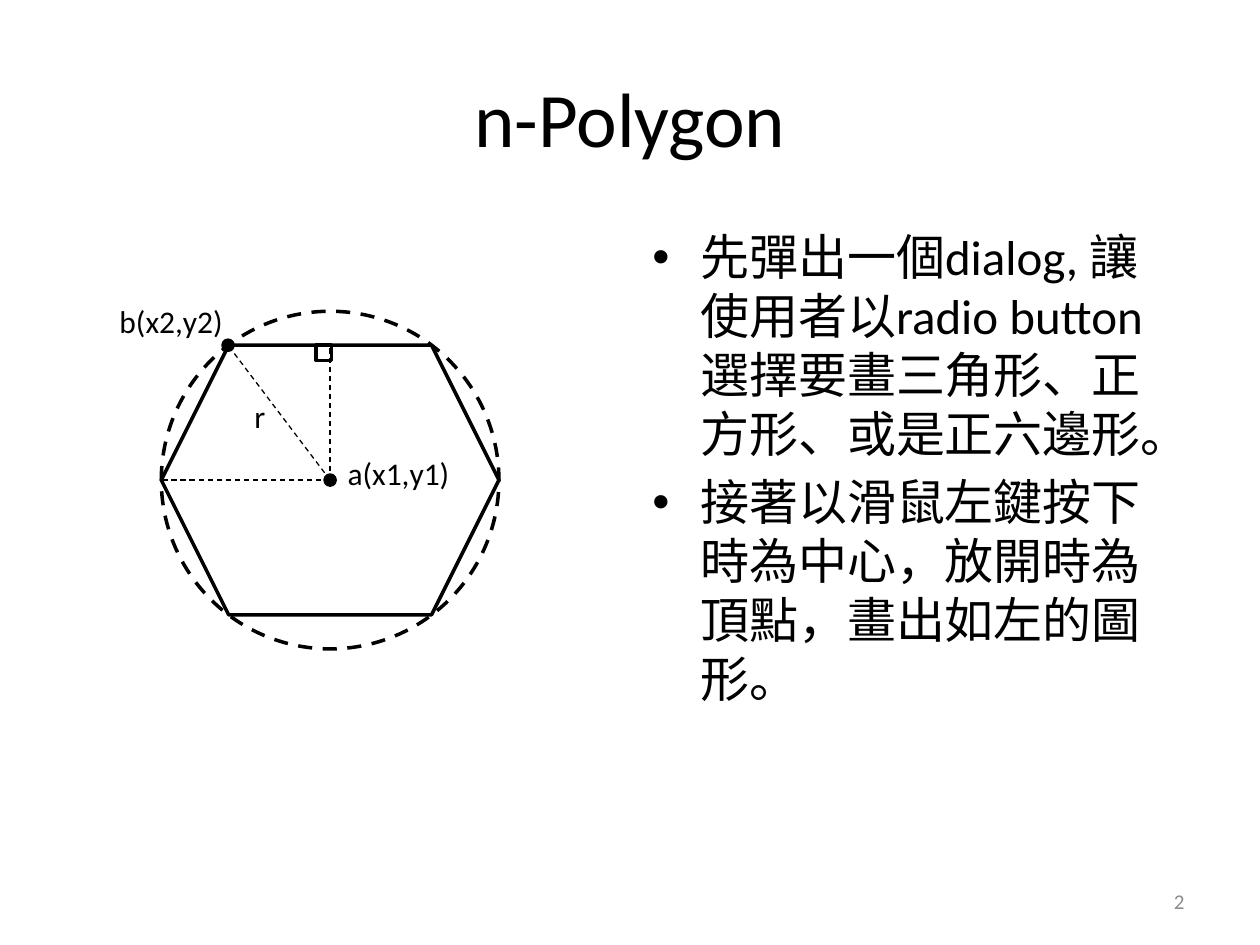
from dataclasses import dataclass

from lxml.etree import SubElement
from pptx import Presentation
from pptx.dml.color import RGBColor
from pptx.enum.dml import MSO_LINE
from pptx.enum.shapes import MSO_CONNECTOR, MSO_SHAPE
from pptx.enum.text import MSO_ANCHOR, PP_ALIGN
from pptx.oxml.ns import qn
from pptx.util import Inches, Pt


@dataclass(frozen=True)
class Theme:
    font: str = "Calibri"
    ink: RGBColor = RGBColor(0, 0, 0)
    muted: RGBColor = RGBColor(0x8C, 0x8C, 0x8C)
    title: int = 44
    body: int = 28
    label: int = 18
    number: int = 12
    outline: float = 2
    guide: float = 0.75


THEME = Theme()
TITLE = "n-Polygon"
BULLETS = [
    "先彈出一個dialog, 讓使用者以radio button選擇要畫三角形、正方形、或是正六邊形。",
    "接著以滑鼠左鍵按下時為中心，放開時為頂點，畫出如左的圖形。",
]
PAGE_NUMBER = "2"

CENTER_X, CENTER_Y = 2.62, 3.81
RADIUS = 1.34
HALF_HEIGHT = 1.07
VERTEX = (1.81, CENTER_Y - HALF_HEIGHT)
DOT = 0.08
SQUARE = 0.12
GUIDE_ENDS = [
    (CENTER_X, CENTER_Y - HALF_HEIGHT),
    VERTEX,
    (CENTER_X - RADIUS, CENTER_Y),
]
LABELS = [
    ("r", (1.92, 3.1, 0.29, 0.4)),
    ("a(x1,y1)", (2.66, 3.55, 1.02, 0.71)),
    ("b(x2,y2)", (0.85, 2.35, 1.03, 0.71)),
]


def style_text(paragraph, size, color=THEME.ink):
    font = paragraph.font
    font.name, font.size, font.color.rgb = THEME.font, Pt(size), color


def add_text(shapes, text, box, size, color=THEME.ink, wrap=True):
    text_box = shapes.add_textbox(*map(Inches, box))
    frame = text_box.text_frame
    frame.word_wrap = wrap
    frame.text = text
    for paragraph in frame.paragraphs:
        style_text(paragraph, size, color)
    return frame


def add_outline(shapes, kind, box, dash=None, filled=False):
    shape = shapes.add_shape(kind, *map(Inches, box))
    shape.shadow.inherit = False
    if filled:
        shape.fill.solid()
        shape.fill.fore_color.rgb = THEME.ink
    else:
        shape.fill.background()
    shape.line.color.rgb = THEME.ink
    shape.line.width = Pt(THEME.outline)
    if dash:
        shape.line.dash_style = dash


def centered_box(x, y, half_width, half_height):
    return x - half_width, y - half_height, 2 * half_width, 2 * half_height


def add_guide(shapes, end):
    points = (CENTER_X, CENTER_Y, *end)
    connector = shapes.add_connector(MSO_CONNECTOR.STRAIGHT, *map(Inches, points))
    connector.line.color.rgb = THEME.ink
    connector.line.width = Pt(THEME.guide)
    connector.line.dash_style = MSO_LINE.DASH
    SubElement(connector._element.spPr, qn("a:effectLst"))


def add_diagram(slide):
    shapes = slide.shapes.add_group_shape().shapes
    add_outline(shapes, MSO_SHAPE.HEXAGON,
                centered_box(CENTER_X, CENTER_Y, RADIUS, HALF_HEIGHT))
    add_outline(shapes, MSO_SHAPE.OVAL,
                centered_box(CENTER_X, CENTER_Y, RADIUS, RADIUS), MSO_LINE.DASH)
    for end in GUIDE_ENDS:
        add_guide(shapes, end)
    for x, y in [(CENTER_X, CENTER_Y), VERTEX]:
        add_outline(shapes, MSO_SHAPE.OVAL,
                    centered_box(x, y, DOT / 2, DOT / 2), filled=True)
    for text, box in LABELS:
        add_text(shapes, text, box, THEME.label, wrap=False)
    add_outline(shapes, MSO_SHAPE.RECTANGLE,
                (CENTER_X - SQUARE + 0.01, VERTEX[1], SQUARE, SQUARE))


def add_bullets(slide):
    frame = add_text(slide.shapes, "\n".join(BULLETS), (5.08, 1.75, 4.42, 4.95), THEME.body)
    for index, paragraph in enumerate(frame.paragraphs):
        paragraph.space_before = Pt(0.2 * THEME.body if index else 0)
        properties = paragraph._p.get_or_add_pPr()
        properties.set("marL", str(Inches(0.38)))
        properties.set("indent", str(-Inches(0.38)))
        font_properties = properties.find(qn("a:defRPr"))
        bullet_font = properties.makeelement(qn("a:buFont"), {"typeface": "Arial"})
        bullet = properties.makeelement(qn("a:buChar"), {"char": "•"})
        font_properties.addprevious(bullet_font)
        font_properties.addprevious(bullet)
        for run in paragraph.runs:
            style_text(run, THEME.body)


def add_title(slide):
    title = slide.shapes.title
    title.left, title.top, title.width, title.height = map(Inches, (0.5, 0.3, 9, 1.25))
    title.text_frame.text = TITLE
    title.text_frame.vertical_anchor = MSO_ANCHOR.MIDDLE
    paragraph = title.text_frame.paragraphs[0]
    paragraph.alignment = PP_ALIGN.CENTER
    style_text(paragraph.runs[0], THEME.title)


def add_page_number(slide):
    frame = add_text(slide.shapes, PAGE_NUMBER, (7.17, 6.95, 2.33, 0.4),
                     THEME.number, THEME.muted)
    frame.vertical_anchor = MSO_ANCHOR.MIDDLE
    frame.paragraphs[0].alignment = PP_ALIGN.RIGHT


def main():
    presentation = Presentation()
    presentation.slide_width, presentation.slide_height = Inches(10), Inches(7.5)
    slide = presentation.slides.add_slide(presentation.slide_layouts[5])
    add_title(slide)
    add_bullets(slide)
    add_diagram(slide)
    add_page_number(slide)
    for shape in [*slide.shapes, *(s for g in slide.shapes if hasattr(g, "shapes") for s in g.shapes)]:
        if shape.has_text_frame:
            for paragraph in shape.text_frame.paragraphs:
                for run in paragraph.runs:
                    if run.font.size is None:
                        source = paragraph.font
                        style_text(run, source.size.pt, source.color.rgb)
    presentation.save("out.pptx")


if __name__ == "__main__":
    main()
